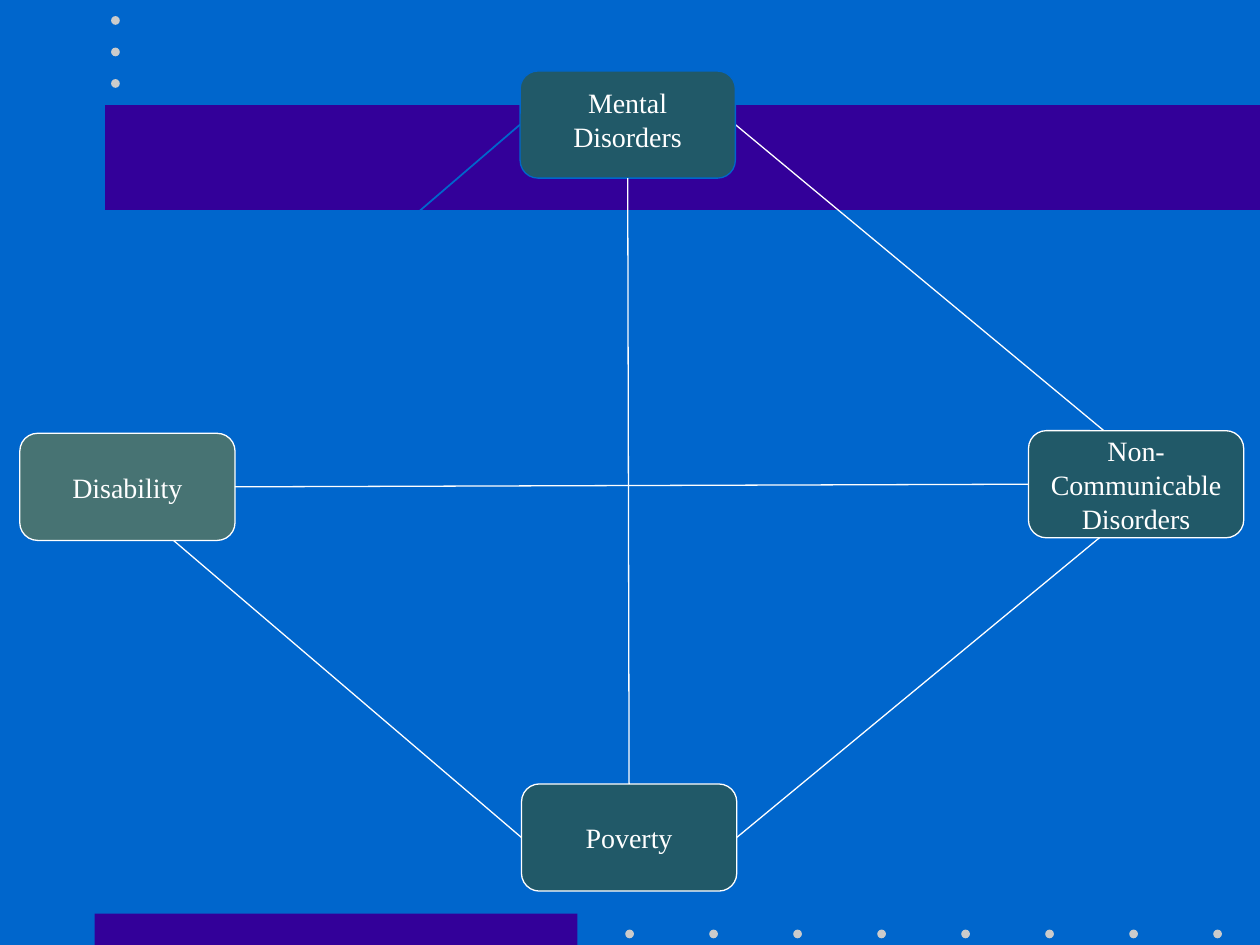
from dataclasses import dataclass

from lxml.etree import SubElement
from pptx import Presentation
from pptx.dml.color import RGBColor
from pptx.enum.shapes import MSO_CONNECTOR, MSO_SHAPE
from pptx.enum.text import MSO_ANCHOR, PP_ALIGN
from pptx.oxml.ns import qn
from pptx.util import Pt

TOP, LEFT, BOTTOM, RIGHT = range(4)


@dataclass(frozen=True)
class Theme:
    background: str = "0066CC"
    band: str = "330099"
    dot: str = "CBCBCB"
    box: str = "215968"
    soft_box: str = "477373"
    light: str = "FFFFFF"
    font: str = "Times New Roman"
    body_size: float = 16
    thin: float = 0.75


def rgb(value):
    return RGBColor.from_string(value)


def write(frame, text, *, font, size, color, anchor=MSO_ANCHOR.MIDDLE):
    """Put centred text in a frame, one paragraph for each line."""
    frame.word_wrap = True
    frame.vertical_anchor = anchor
    frame.text = text
    for paragraph in frame.paragraphs:
        paragraph.alignment = PP_ALIGN.CENTER
        for run in paragraph.runs:
            run.font.name = font
            run.font.size = Pt(size)
            run.font.color.rgb = rgb(color)


class SlideBuilder:
    def __init__(self, slide, theme):
        self.slide = slide
        self.theme = theme
        slide.background.fill.solid()
        slide.background.fill.fore_color.rgb = rgb(theme.background)

    def shape(self, kind, left, top, width, height, fill, outline=None):
        item = self.slide.shapes.add_shape(
            kind, Pt(left), Pt(top), Pt(width), Pt(height))
        item.shadow.inherit = False
        item.fill.solid()
        item.fill.fore_color.rgb = rgb(fill)
        if outline:
            item.line.color.rgb = rgb(outline)
            item.line.width = Pt(self.theme.thin)
        else:
            item.line.fill.background()
        return item

    def band(self, left, top, width, height):
        self.shape(MSO_SHAPE.RECTANGLE, left, top, width, height, self.theme.band)

    def dot(self, left, top):
        self.shape(MSO_SHAPE.OVAL, left, top, 5, 5, self.theme.dot)

    def label(self, frame, text, **options):
        write(frame, text, font=self.theme.font, size=self.theme.body_size,
              color=self.theme.light, **options)

    def box(self, left, top, text="", fill=None, outline=None):
        item = self.shape(MSO_SHAPE.ROUNDED_RECTANGLE, left, top, 123, 61.2,
                          fill or self.theme.box, outline or self.theme.light)
        if text:
            self.label(item.text_frame, text)
        return item

    def text(self, text, left, top, width, height):
        item = self.slide.shapes.add_textbox(
            Pt(left), Pt(top), Pt(width), Pt(height))
        self.label(item.text_frame, text, anchor=MSO_ANCHOR.TOP)

    def link(self, start, side, end, end_side=None, color=None, width=None):
        """Join a box to a second box, or to an (x, y) point."""
        x, y = (0, 0) if end_side is not None else end
        line = self.slide.shapes.add_connector(
            MSO_CONNECTOR.STRAIGHT, 0, 0, Pt(x), Pt(y))
        line.begin_connect(start, side)
        if end_side is not None:
            line.end_connect(end, end_side)
        line.line.color.rgb = rgb(color or self.theme.light)
        line.line.width = Pt(width or self.theme.thin)
        SubElement(line._element.spPr, qn("a:effectLst"))
        return line

    def link_behind(self, front, *args, **options):
        line = self.link(*args, **options)
        front._element.addprevious(line._element)


def main():
    theme = Theme()
    deck = Presentation()
    deck.slide_width, deck.slide_height = Pt(720), Pt(540)
    page = SlideBuilder(deck.slides.add_slide(deck.slide_layouts[6]), theme)

    # Background bands and dots
    page.band(54, 522, 276, 18)
    for column in range(8):
        page.dot(357.3 + 48 * column, 531.2)
    page.band(60, 60, 660, 60)
    for row in range(3):
        page.dot(63.5, 9.2 + 18 * row)

    # Four related conditions
    mental = page.box(297.2, 40.6, outline=theme.background)
    communicable = page.box(587.7, 246.1, "Non-Communicable\nDisorders")
    poverty = page.box(298, 448, "Poverty")
    disability = page.box(11.3, 247.6, "Disability", fill=theme.soft_box)
    page.text("Mental Disorders", 301.7, 45.4, 113.8, 46)

    # Diagonals run behind the boxes at the left and right
    page.link_behind(mental, mental, LEFT, (74.2, 262.8),
                     color=theme.background, width=1)
    page.link_behind(mental, poverty, LEFT, (75.6, 288.7))
    page.link_behind(mental, mental, RIGHT, (650.9, 262.8))
    page.link_behind(mental, poverty, RIGHT, (651.6, 288))

    # Cross in the middle
    page.link(disability, RIGHT, communicable, LEFT)
    page.link(mental, BOTTOM, poverty, TOP)

    deck.save("out.pptx")


if __name__ == "__main__":
    main()
